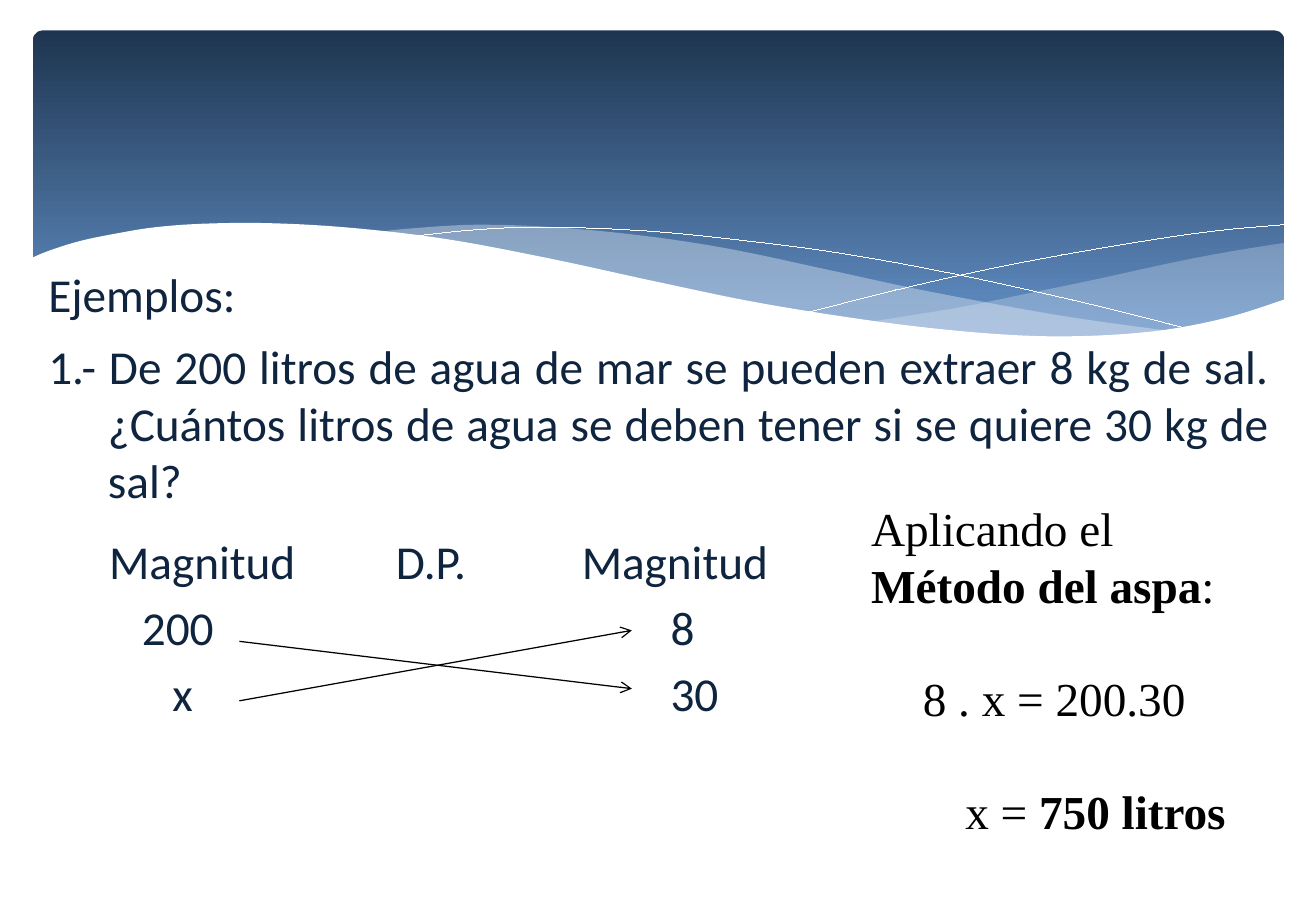
from dataclasses import dataclass

from lxml import etree
from pptx import Presentation
from pptx.dml.color import RGBColor
from pptx.enum.shapes import MSO_CONNECTOR, MSO_SHAPE
from pptx.enum.text import MSO_ANCHOR, PP_ALIGN
from pptx.oxml.ns import qn
from pptx.util import Pt

PX = 9144  # EMU per px, 100 px to the inch
ROUND_RECT = MSO_SHAPE.ROUNDED_RECTANGLE
STRAIGHT = MSO_CONNECTOR.STRAIGHT
TOP, MIDDLE = MSO_ANCHOR.TOP, MSO_ANCHOR.MIDDLE
LEFT, CENTER, JUSTIFY = PP_ALIGN.LEFT, PP_ALIGN.CENTER, PP_ALIGN.JUSTIFY

Point = tuple[int, int]


@dataclass(frozen=True)
class Theme:
    navy: str = "0F243E"
    black: str = "000000"
    white: str = "FFFFFF"
    veil: str = "E7EDF5"
    banner_top: str = "1E3550"
    banner_bottom: str = "608DC3"
    sans: str = "Calibri"
    serif: str = "Times New Roman"
    size: float = 28
    arrow_width: float = 0.75
    row_gap: float = 5.6
    step_gap: float = 33.6


THEME = Theme()


@dataclass(frozen=True)
class Wave:
    curve: list[Point]
    corners: tuple[Point, ...] = ()
    back: tuple[Point, ...] = ()
    fill: str | None = None
    opacity: int = 100


@dataclass(frozen=True)
class Line:
    runs: tuple[tuple[str, bool], ...]
    align: PP_ALIGN = LEFT
    before: float = 0
    indent: int = 0
    hanging: int = 0


@dataclass(frozen=True)
class TextBlock:
    box: tuple[int, int, int, int]
    lines: tuple[Line, ...]
    font: str = THEME.sans
    color: str = THEME.navy
    anchor: MSO_ANCHOR = TOP


@dataclass(frozen=True)
class Arrow:
    start: Point
    end: Point


WAVES = [
    Wave([(1057, 200), (1013, 207), (966, 216), (902, 230), (844, 242), (790, 253), (716, 265)],
         back=((716, 265), (778, 272), (846, 277), (904, 277), (963, 272), (1013, 262), (1057, 247)),
         fill=THEME.veil, opacity=29),
    Wave([(967, 273), (874, 260), (765, 240), (681, 222), (601, 205), (529, 194),
          (455, 187), (391, 185), (339, 188), (310, 191)],
         back=((310, 191), (392, 203), (487, 222), (614, 248), (704, 264), (783, 274),
               (862, 278), (919, 277), (967, 273)),
         fill=THEME.veil, opacity=40),
    Wave([(335, 195), (393, 189), (451, 187), (530, 190), (603, 197), (689, 208),
          (788, 226), (900, 251), (983, 272)]),
    Wave([(665, 257), (753, 235), (841, 216), (938, 199), (1001, 190), (1056, 185)]),
    Wave([(1059, 246), (1008, 262), (948, 273), (876, 277), (806, 274), (724, 265), (628, 250),
          (545, 233), (453, 213), (368, 197), (293, 188), (229, 184), (174, 184), (129, 187),
          (92, 193), (64, 199), (39, 207), (25, 213)],
         corners=((25, 329), (1059, 329)), fill=THEME.white),
]


def magnitude_column(left: int, heading: str, *values: tuple[str, int]) -> TextBlock:
    """A heading with indented values below it."""
    rows = (Line(((text, False),), before=THEME.row_gap, indent=indent) for text, indent in values)
    return TextBlock((left, 433, 190, 173), (Line(((heading, False),)), *rows))


TEXTS = [
    TextBlock((30, 210, 236, 63), (Line((("Ejemplos:", False),)),), anchor=MIDDLE),
    TextBlock((30, 273, 1024, 150), (
        Line((("1.- De 200 litros de agua de mar se pueden extraer 8 kg de sal. "
               "¿Cuántos litros de agua se deben tener si se quiere 30 kg de sal?", False),),
             JUSTIFY, indent=49, hanging=49),)),
    magnitude_column(80, "Magnitud", ("200", 27), ("x", 52)),
    magnitude_column(316, "D.P."),
    magnitude_column(469, "Magnitud", ("8", 73), ("30", 73)),
    TextBlock((707, 406, 321, 320), (
        Line((("Aplicando el", False),)),
        Line((("Método del aspa", True), (":", False))),
        Line((("8 . x = 200.30", False),), CENTER, THEME.step_gap),
        Line((("x = ", False), ("750 litros", True)), CENTER, THEME.step_gap, indent=68)),
        THEME.serif, THEME.black),
]

ARROWS = [Arrow((197, 577), (520, 519)), Arrow((197, 528), (520, 567))]


def rgb(code: str) -> RGBColor:
    return RGBColor.from_string(code)


def apply(target, values: dict) -> None:
    for name, value in values.items():
        setattr(target, name, value)


def smooth(points, steps: int = 6) -> list[tuple[float, float]]:
    """Catmull-Rom curve through the points."""
    padded = [points[0], *points, points[-1]]
    curve = [points[0]]
    for a, b, c, d in zip(padded, padded[1:], padded[2:], padded[3:]):
        for t in (step / steps for step in range(1, steps + 1)):
            curve.append(tuple(
                (2 * q + (r - p) * t + (2 * p - 5 * q + 4 * r - s) * t ** 2
                 + (3 * q - p - 3 * r + s) * t ** 3) / 2
                for p, q, r, s in zip(a, b, c, d)))
    return curve


def draw_banner(shapes) -> None:
    banner = shapes.add_shape(ROUND_RECT, *(v * PX for v in (27, 25, 1030, 270)))
    banner.adjustments[0] = 0.03
    banner.shadow.inherit = False
    banner.line.fill.background()
    banner.fill.gradient()
    banner.fill.gradient_angle = 270
    stops = ((0, THEME.banner_top), (0.9, THEME.banner_bottom))
    for stop, (position, color) in zip(banner.fill.gradient_stops, stops):
        stop.position = position
        stop.color.rgb = rgb(color)


def draw_wave(shapes, wave: Wave) -> None:
    outline = smooth(wave.curve) + list(wave.corners)
    if wave.back:
        outline += smooth(wave.back)
    outline = [(round(x * PX), round(y * PX)) for x, y in outline]
    builder = shapes.build_freeform(*outline[0])
    builder.add_line_segments(outline[1:], close=wave.fill is not None)
    shape = builder.convert_to_shape()
    shape.shadow.inherit = False
    if wave.fill is None:
        shape.fill.background()
        shape.line.color.rgb = rgb(THEME.white)
        shape.line._get_or_add_ln().set("w", "0")  # hairline
        return
    shape.line.fill.background()
    shape.fill.solid()
    shape.fill.fore_color.rgb = rgb(wave.fill)
    if wave.opacity < 100:
        color = shape.fill._xPr.find(".//" + qn("a:srgbClr"))
        etree.SubElement(color, qn("a:alpha"), val=str(wave.opacity * 1000))


def draw_text(shapes, block: TextBlock) -> None:
    frame = shapes.add_textbox(*(v * PX for v in block.box)).text_frame
    apply(frame, {"word_wrap": True, "vertical_anchor": block.anchor})
    for index, line in enumerate(block.lines):
        paragraph = frame.add_paragraph() if index else frame.paragraphs[0]
        paragraph.alignment = line.align
        if line.before:
            paragraph.space_before = Pt(line.before)
        properties = paragraph._p.get_or_add_pPr()
        properties.set("marL", str(line.indent * PX))
        properties.set("indent", str(-line.hanging * PX))
        for text, bold in line.runs:
            run = paragraph.add_run()
            run.text = text
            apply(run.font, {"name": block.font, "size": Pt(THEME.size), "bold": bold})
            run.font.color.rgb = rgb(block.color)


def draw_arrow(shapes, arrow: Arrow) -> None:
    connector = shapes.add_connector(STRAIGHT, *(v * PX for v in arrow.start + arrow.end))
    connector.line.color.rgb = rgb(THEME.black)
    connector.line.width = Pt(THEME.arrow_width)
    etree.SubElement(connector.line._get_or_add_ln(), qn("a:tailEnd"), type="arrow")
    etree.SubElement(connector._element.spPr, qn("a:effectLst"))


def main() -> None:
    deck = Presentation()
    apply(deck, {"slide_width": 1083 * PX, "slide_height": 750 * PX})
    shapes = deck.slides.add_slide(deck.slide_layouts[6]).shapes

    # Banner with waves
    draw_banner(shapes)
    for wave in WAVES:
        draw_wave(shapes, wave)

    # Problem, magnitudes and solution
    for block in TEXTS:
        draw_text(shapes, block)

    # Cross of the method
    for arrow in ARROWS:
        draw_arrow(shapes, arrow)

    deck.save("out.pptx")


if __name__ == "__main__":
    main()
